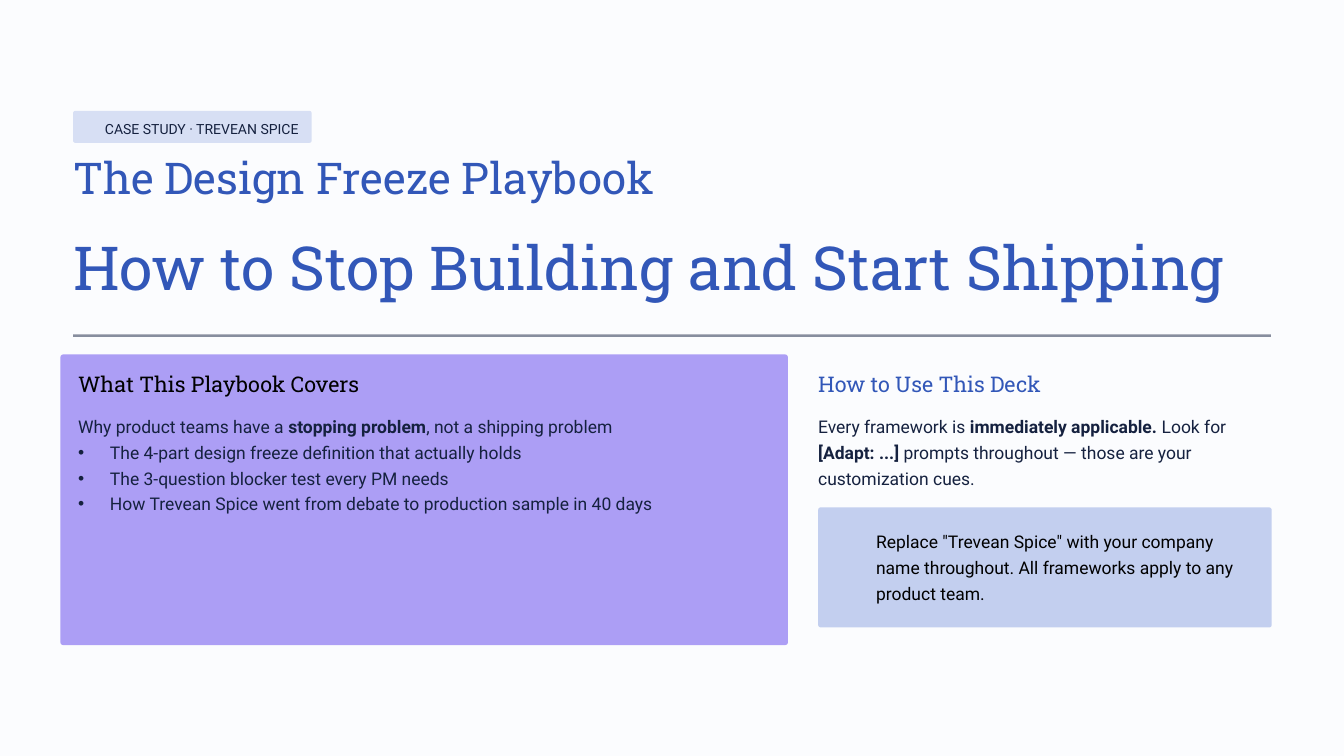
from dataclasses import dataclass

from lxml import etree
from pptx import Presentation
from pptx.dml.color import RGBColor
from pptx.enum.shapes import MSO_SHAPE
from pptx.oxml.ns import qn
from pptx.util import Inches, Pt

RECT = MSO_SHAPE.RECTANGLE
ROUND = MSO_SHAPE.ROUNDED_RECTANGLE
SANS, SLAB = "Roboto", "Roboto Slab"
PAPER, INK, BLUE, BLACK = "FBFCFE", "15213F", "3257B8", "000000"
LEFT, RIGHT = 0.87, 9.74  # left edges of the slide text and right column
INNER = 0.93  # left edge of the text in the purple card
HEAD, BODY = 4.4, 4.9  # tops of the column heads and column texts
SIDE = 5.4  # width of the right column
INDENT = 0.38


@dataclass
class Style:
    font: str
    size: float
    pitch: float
    color: str


@dataclass
class Panel:
    box: tuple[float, float, float, float]
    color: str
    radius: float = 0
    alpha: int = 100


@dataclass
class Label:
    """Text lines; ** switches bold, and a leading bullet sign makes a list item."""
    box: tuple[float, float, float, float]
    style: Style
    lines: list[str]
    wrap: bool = False


TITLE = Style(SLAB, 52, 65, BLUE)
KICKER = Style(SLAB, 37.5, 47, BLUE)
TAG = Style(SANS, 12, 17.5, INK)
TEXT = Style(SANS, 15, 22, INK)
NOTE = Style(SANS, 15, 22, BLACK)
CARD = Style(SLAB, 18.5, 23.5, BLACK)
GUIDE = Style(SLAB, 18.5, 23.5, BLUE)

PANELS = [
    Panel((LEFT, 1.32, 2.84, 0.38), "D7DFF4", 0.067),
    Panel((LEFT, 3.98, 14.26, 0.03), INK, alpha=50),
    Panel((0.72, 4.22, 8.66, 3.46), "AC9EF5", 0.009),
    Panel((RIGHT, 6.04, SIDE, 1.43), "C3CFEF", 0.022),
]
LABELS = [
    Label((1.25, 1.39, 2.33, 0.25), TAG, ["CASE STUDY · TREVEAN SPICE"]),
    Label((LEFT, 1.77, 6.99, 0.66), KICKER, ["The Design Freeze Playbook"]),
    Label((LEFT, 2.7, 13.82, 0.91), TITLE,
          ["How to Stop Building and Start Shipping"]),
    Label((INNER, HEAD, 3.44, 0.33), CARD, ["What This Playbook Covers"]),
    Label((INNER, BODY, 8.23, 1.44), TEXT, [
        "Why product teams have a **stopping problem**, not a shipping problem",
        "•The 4-part design freeze definition that actually holds",
        "•The 3-question blocker test every PM needs",
        "•How Trevean Spice went from debate to production sample in 40 days",
    ], True),
    Label((RIGHT, HEAD, 2.72, 0.33), GUIDE, ["How to Use This Deck"]),
    Label((RIGHT, BODY, SIDE, 0.94), TEXT, [
        "Every framework is **immediately applicable.** Look for "
        "**[Adapt: ...]** prompts throughout — those are your "
        "customization cues.",
    ], True),
    Label((10.43, 6.27, 4.5, 0.94), NOTE, [
        'Replace "Trevean Spice" with your company name throughout. '
        "All frameworks apply to any product team.",
    ], True),
]


def paint(fill, color: str) -> None:
    fill.solid()
    fill.fore_color.rgb = RGBColor.from_string(color)


def draw_panel(slide, panel: Panel) -> None:
    kind = ROUND if panel.radius else RECT
    shape = slide.shapes.add_shape(kind, *map(Inches, panel.box))
    shape.shadow.inherit = False
    shape.line.fill.background()
    paint(shape.fill, panel.color)
    if panel.radius:
        shape.adjustments[0] = panel.radius
    if panel.alpha < 100:
        tint = shape.fill._xPr.find(".//" + qn("a:srgbClr"))
        etree.SubElement(tint, qn("a:alpha"), val=str(panel.alpha * 1000))


def add_bullet(para) -> None:
    props = para._p.get_or_add_pPr()
    props.set("marL", str(Inches(INDENT)))
    props.set("indent", str(-Inches(INDENT)))
    etree.SubElement(props, qn("a:buFont"), typeface="Arial")
    etree.SubElement(props, qn("a:buChar"), char="•")


def draw_label(slide, label: Label) -> None:
    frame = slide.shapes.add_textbox(*map(Inches, label.box)).text_frame
    frame.margin_left = frame.margin_right = 0
    frame.margin_top = frame.margin_bottom = 0
    frame.word_wrap = label.wrap
    style = label.style
    for row, line in enumerate(label.lines):
        para = frame.add_paragraph() if row else frame.paragraphs[0]
        para.line_spacing = Pt(style.pitch)
        if line.startswith("•"):
            add_bullet(para)
        for part, words in enumerate(line.removeprefix("•").split("**")):
            run = para.add_run()
            run.text = words
            run.font.name = style.font
            run.font.size = Pt(style.size)
            run.font.bold = part % 2 == 1
            paint(run.font.fill, style.color)


def main() -> None:
    deck = Presentation()
    deck.slide_width, deck.slide_height = Inches(16), Inches(9)
    slide = deck.slides.add_slide(deck.slide_layouts[6])
    paint(slide.background.fill, PAPER)
    for panel in PANELS:
        draw_panel(slide, panel)
    for label in LABELS:
        draw_label(slide, label)
    deck.save("out.pptx")


if __name__ == "__main__":
    main()
